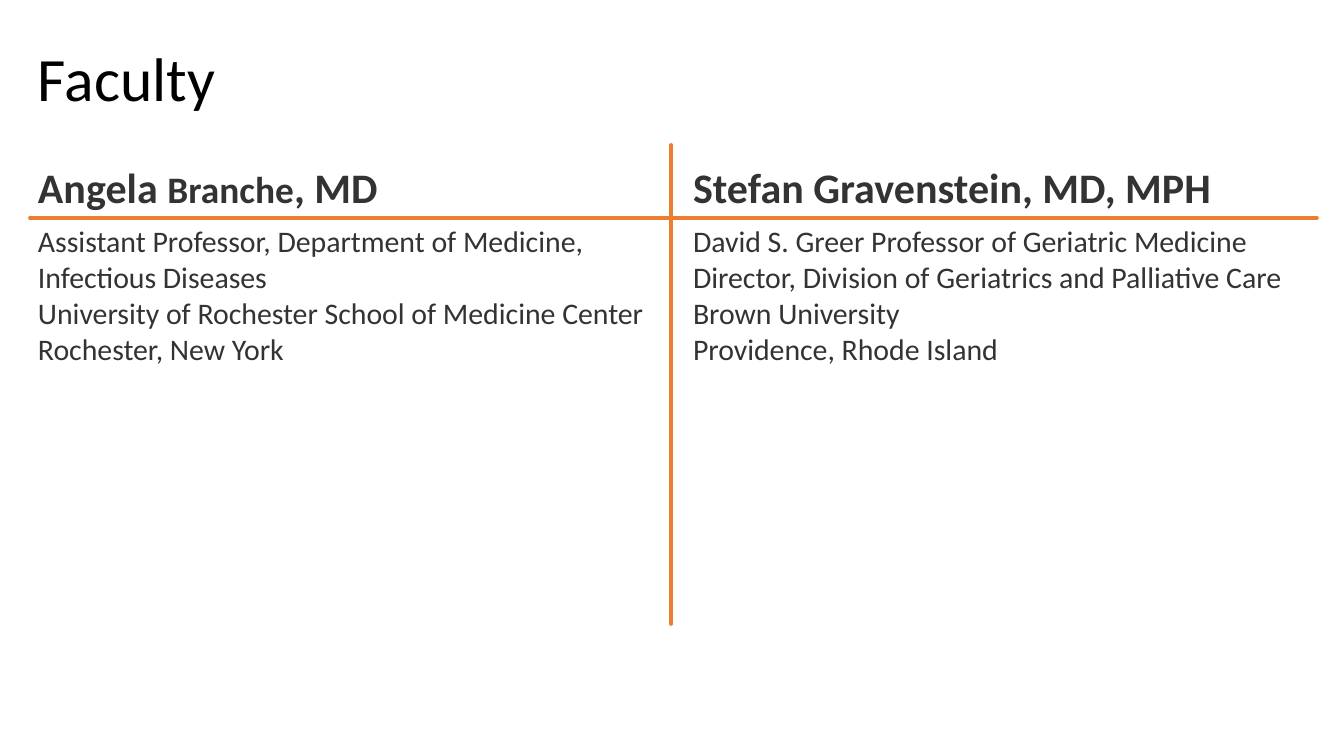
"""Build the Faculty slide: two speakers side by side, parted by orange rules."""
import pptx
import pptx.dml.color
import pptx.enum.shapes
import pptx.enum.text
import pptx.oxml.ns
import pptx.util
from lxml import etree

TITLE = "Faculty"
FACULTY = [
    ([("Angela ", 22.5), ("Branche", 20), (", MD", 22.5)],
     ["Assistant Professor, Department of Medicine, Infectious Diseases",
      "University of Rochester School of Medicine Center",
      "Rochester, New York"]),
    ([("Stefan Gravenstein, MD, MPH", 22.5)],
     ["David S. Greer Professor of Geriatric Medicine",
      "Director, Division of Geriatrics and Palliative Care",
      "Brown University",
      "Providence, Rhode Island"]),
]
RULES = [(30, 218, 1317, 218), (671, 624, 671, 145)]
BLACK, GRAY, ORANGE = "000000", "333333", "ED7D31"
LEFT, COLUMN_STEP, COLUMN_WIDTH = 28, 655, 633
NAME_TOP, DETAIL_TOP, DETAIL_BOTTOM = 148, 218, 624
ANCHOR = pptx.enum.text.MSO_ANCHOR


def px(n):
    return pptx.util.Emu(round(n * 914400 / 134.4))


def rgb(value):
    return pptx.dml.color.RGBColor.from_string(value)


def add_text(s, paragraphs, x, y, w, h, color=GRAY, bold=False,
             anchor=ANCHOR.TOP, spacing=1.0):
    tf = s.shapes.add_textbox(px(x), px(y), px(w), px(h)).text_frame
    tf.word_wrap = True
    tf.vertical_anchor = anchor
    tf.margin_left = tf.margin_right = px(10)
    tf.margin_top = tf.margin_bottom = px(5)
    for i, runs in enumerate(paragraphs):
        p = tf.add_paragraph() if i else tf.paragraphs[0]
        p.line_spacing = spacing
        for text, size in runs:
            r = p.add_run()
            r.text = text
            r.font.name = "Calibri"
            r.font.size = pptx.util.Pt(size)
            r.font.bold = bold
            r.font.color.rgb = rgb(color)


def add_rule(s, *ends):
    straight = pptx.enum.shapes.MSO_CONNECTOR.STRAIGHT
    rule = s.shapes.add_connector(straight, *map(px, ends))
    rule.line.color.rgb = rgb(ORANGE)
    rule.line.width = pptx.util.Pt(2)
    sp = rule._element.spPr
    sp.find(pptx.oxml.ns.qn("a:ln")).set("cap", "rnd")
    etree.SubElement(sp, pptx.oxml.ns.qn("a:effectLst"))


def main():
    prs = pptx.Presentation()
    prs.slide_width, prs.slide_height = px(1344), px(756)
    s = prs.slides.add_slide(prs.slide_layouts[6])
    add_text(s, [[(TITLE, 33)]], LEFT, 19, 1288, 126, color=BLACK,
             anchor=ANCHOR.MIDDLE, spacing=0.9)
    for i, (name, details) in enumerate(FACULTY):
        x = LEFT + i * COLUMN_STEP
        add_text(s, [name], x, NAME_TOP, COLUMN_WIDTH, DETAIL_TOP - NAME_TOP,
                 bold=True, anchor=ANCHOR.BOTTOM, spacing=0.9)
        add_text(s, [[(line, 16)] for line in details], x, DETAIL_TOP,
                 COLUMN_WIDTH, DETAIL_BOTTOM - DETAIL_TOP)
    for ends in RULES:
        add_rule(s, *ends)
    prs.save("out.pptx")


if __name__ == "__main__":
    main()
